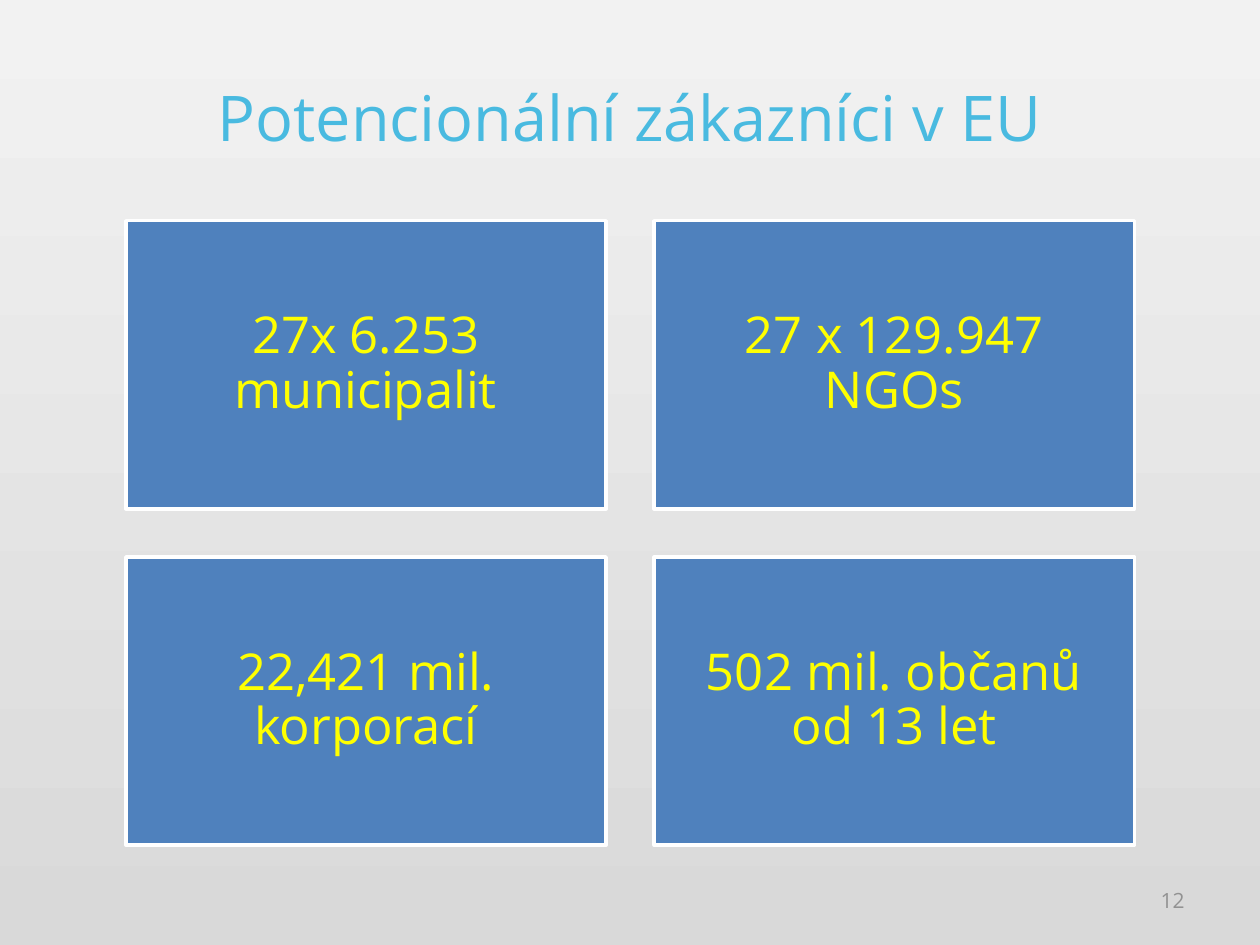
from pptx import Presentation
from pptx.dml.color import RGBColor
from pptx.enum import shapes, text
from pptx.util import Cm, Pt

FONT = "Open Sans"
COLORS = {
    "sky_top": "F2F2F2",
    "sky_bottom": "D9D9D9",
    "title": "49BAE0",
    "card": "4F81BD",
    "border": "FFFFFF",
    "card_text": "FFFF00",
    "page_number": "929292",
}
CUSTOMERS = [
    "27x 6.253 municipalit",
    "27 x 129.947 NGOs",
    "22,421 mil. korporací",
    "502 mil. občanů od 13 let",
]
COLUMNS = 2
CARD_WIDTH, CARD_HEIGHT = 9.68, 5.81
CARD_GAP = 0.97
GRID_LEFT, GRID_TOP = 2.54, 4.45
MARGINS = ("margin_left", "margin_top", "margin_right", "margin_bottom")


def color(name):
    return RGBColor.from_string(COLORS[name])


def write(shape, wording, size, color_name, align, **paragraph_format):
    """Put one formatted, vertically centred paragraph into a shape."""
    frame = shape.text_frame
    frame.word_wrap = True
    frame.auto_size = text.MSO_AUTO_SIZE.NONE
    frame.vertical_anchor = text.MSO_ANCHOR.MIDDLE
    paragraph = frame.paragraphs[0]
    for key, value in {"alignment": align, **paragraph_format}.items():
        setattr(paragraph, key, value)
    run = paragraph.add_run()
    run.text = wording
    for key, value in {"name": FONT, "size": Pt(size), "bold": False}.items():
        setattr(run.font, key, value)
    run.font.color.rgb = color(color_name)


def paint_background(slide):
    fill = slide.background.fill
    fill.gradient()
    fill.gradient_angle = 270
    for stop, name in zip(fill.gradient_stops, ("sky_top", "sky_bottom")):
        stop.color.rgb = color(name)


def set_title(slide, wording):
    title = slide.shapes.title
    place = {"left": 1.27, "top": 0.76, "width": 22.86, "height": 3.18}
    for key, value in place.items():
        setattr(title, key, Cm(value))
    write(title, wording, 36, "title", text.PP_ALIGN.CENTER)


def add_card(slide, left, top, wording):
    card = slide.shapes.add_shape(
        shapes.MSO_SHAPE.RECTANGLE,
        Cm(left), Cm(top), Cm(CARD_WIDTH), Cm(CARD_HEIGHT),
    )
    card.shadow.inherit = False
    card.fill.solid()
    card.fill.fore_color.rgb = color("card")
    card.line.color.rgb = color("border")
    card.line.width = Pt(2)
    for margin in MARGINS:
        setattr(card.text_frame, margin, Cm(0.3))
    write(card, wording, 29, "card_text", text.PP_ALIGN.CENTER,
          line_spacing=0.9, space_after=Pt(10))


def add_page_number(slide, number):
    box = slide.shapes.add_textbox(Cm(18.2), Cm(17.65), Cm(5.93), Cm(1.01))
    write(box, number, 12, "page_number", text.PP_ALIGN.RIGHT)


def main():
    deck = Presentation()
    deck.slide_width, deck.slide_height = Cm(25.4), Cm(19.05)
    slide = deck.slides.add_slide(deck.slide_layouts[5])
    paint_background(slide)
    set_title(slide, "Potencionální zákazníci v EU")
    for index, customer in enumerate(CUSTOMERS):
        row, column = divmod(index, COLUMNS)
        add_card(
            slide,
            GRID_LEFT + column * (CARD_WIDTH + CARD_GAP),
            GRID_TOP + row * (CARD_HEIGHT + CARD_GAP),
            customer,
        )
    add_page_number(slide, "12")
    deck.save("out.pptx")


if __name__ == "__main__":
    main()
